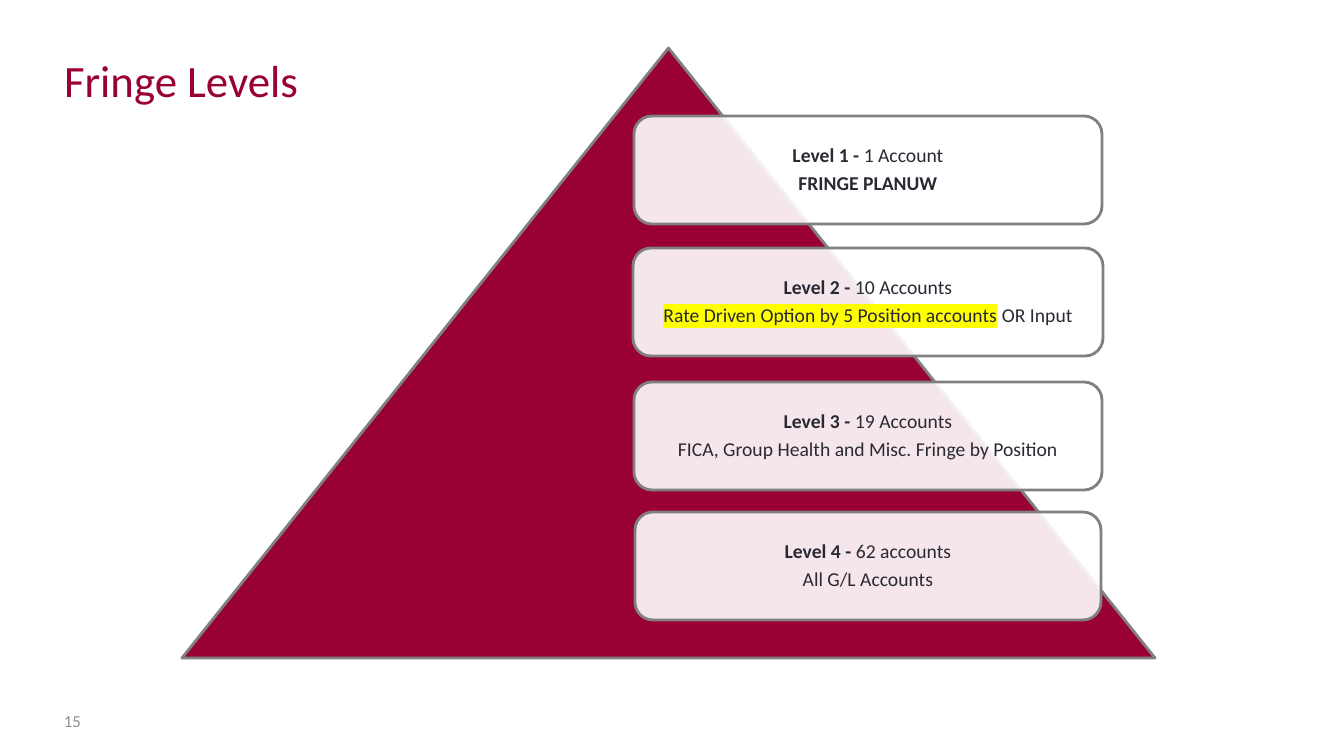
from dataclasses import dataclass

from lxml import etree
from pptx import Presentation
from pptx.dml.color import RGBColor
from pptx.enum.shapes import MSO_SHAPE
from pptx.enum.text import MSO_ANCHOR, MSO_AUTO_SIZE, PP_ALIGN
from pptx.oxml.ns import qn
from pptx.shapes.autoshape import Shape
from pptx.slide import Slide
from pptx.text.text import TextFrame, _Paragraph, _Run
from pptx.util import Emu, Pt

TRIANGLE = MSO_SHAPE.ISOSCELES_TRIANGLE
ROUNDED = MSO_SHAPE.ROUNDED_RECTANGLE
TOP, MIDDLE = MSO_ANCHOR.TOP, MSO_ANCHOR.MIDDLE
LEFT, CENTER = PP_ALIGN.LEFT, PP_ALIGN.CENTER
NO_FIT = MSO_AUTO_SIZE.NONE

TITLE_ONLY = 5
WIDE, HIGH = 1344, 756
SCALE = 914400 * 13.33 / WIDE


@dataclass(frozen=True)
class Theme:
    font: str = "Calibri"
    red: str = "990033"
    gray: str = "808080"
    white: str = "FFFFFF"
    ink: str = "292934"
    pale: str = "8E8E90"
    mark: str = "FFFF00"
    title: int = 32
    body: int = 14
    small: int = 12
    line: int = 2
    solid: int = 90


@dataclass(frozen=True)
class Piece:
    text: str
    bold: bool = False
    mark: bool = False


@dataclass(frozen=True)
class Level:
    name: str
    count: str
    top: int
    width: int
    detail: tuple[Piece, ...]


THEME = Theme()
MID, TALL, INSET = 868, 108, 6
LEVELS = (
    Level("Level 1 - ", "1 Account", 116, 468, (Piece("FRINGE PLANUW", bold=True),)),
    Level("Level 2 - ", "10 Accounts", 248, 470,
          (Piece("Rate Driven Option by 5 Position accounts", mark=True),
           Piece(" OR Input"))),
    Level("Level 3 - ", "19 Accounts", 382, 468,
          (Piece("FICA, Group Health and Misc. Fringe by Position"),)),
    Level("Level 4 - ", "62 accounts", 512, 466, (Piece("All G/L Accounts"),)),
)


def px(count: int) -> Emu:
    return Emu(round(count * SCALE))


def style(target: object, **values: object) -> None:
    """Set each named value as an attribute of the target."""
    for name, value in values.items():
        setattr(target, name, value)


def add_run(para: _Paragraph, text: str, size: int, color: str,
            bold: bool = False) -> _Run:
    run = para.add_run()
    run.text = text
    style(run.font, name=THEME.font, size=Pt(size), bold=bold)
    run.font.color.rgb = RGBColor.from_string(color)
    return run


def mark_run(run: _Run, color: str) -> None:
    """Highlight a run; the element has to follow the text fill."""
    light = etree.Element(qn("a:highlight"))
    etree.SubElement(light, qn("a:srgbClr"), val=color)
    run.font._element.find(qn("a:solidFill")).addnext(light)


def add_shape(slide: Slide, kind: MSO_SHAPE, box: tuple[int, ...], fill: str) -> Shape:
    shape = slide.shapes.add_shape(kind, *map(px, box))
    shape.shadow.inherit = False
    shape.fill.solid()
    shape.fill.fore_color.rgb = RGBColor.from_string(fill)
    shape.line.color.rgb = RGBColor.from_string(THEME.gray)
    shape.line.width = Pt(THEME.line)
    return shape


def fade(shape: Shape, percent: int) -> None:
    """Make the fill of a shape partly opaque."""
    color = shape._element.spPr.find(qn("a:solidFill"))[0]
    etree.SubElement(color, qn("a:alpha"), val=str(percent * 1000))


def add_line(frame: TextFrame, first: bool, pieces: tuple[Piece, ...]) -> None:
    para = frame.paragraphs[0] if first else frame.add_paragraph()
    style(para, alignment=CENTER, line_spacing=0.9, space_after=Pt(5))
    for piece in pieces:
        run = add_run(para, piece.text, THEME.body, THEME.ink, piece.bold)
        if piece.mark:
            mark_run(run, THEME.mark)


def add_level(slide: Slide, level: Level) -> None:
    box = (MID - level.width // 2, level.top, level.width, TALL)
    shape = add_shape(slide, ROUNDED, box, THEME.white)
    fade(shape, THEME.solid)
    frame = shape.text_frame
    inset = px(INSET)
    style(frame, word_wrap=True, vertical_anchor=MIDDLE, margin_left=inset,
          margin_right=inset, margin_top=inset, margin_bottom=inset)
    add_line(frame, True, (Piece(level.name, bold=True), Piece(level.count)))
    add_line(frame, False, level.detail)


def add_title(slide: Slide, text: str) -> None:
    title = slide.shapes.title
    style(title, left=px(54), top=px(48), width=px(502), height=px(65))
    frame = title.text_frame
    style(frame, word_wrap=True, vertical_anchor=TOP, auto_size=NO_FIT)
    para = frame.paragraphs[0]
    para.alignment = LEFT
    add_run(para, text, THEME.title, THEME.red)


def add_number(slide: Slide, text: str) -> None:
    frame = slide.shapes.add_textbox(px(54), px(701), px(56), px(40)).text_frame
    style(frame, word_wrap=True, vertical_anchor=MIDDLE)
    add_run(frame.paragraphs[0], text, THEME.small, THEME.pale)


def main() -> None:
    deck = Presentation()
    style(deck, slide_width=px(WIDE), slide_height=px(HIGH))
    slide = deck.slides.add_slide(deck.slide_layouts[TITLE_ONLY])
    add_title(slide, "Fringe Levels")
    add_shape(slide, TRIANGLE, (182, 48, 973, 610), THEME.red)
    for level in LEVELS:
        add_level(slide, level)
    add_number(slide, "15")
    deck.save("out.pptx")


if __name__ == "__main__":
    main()
